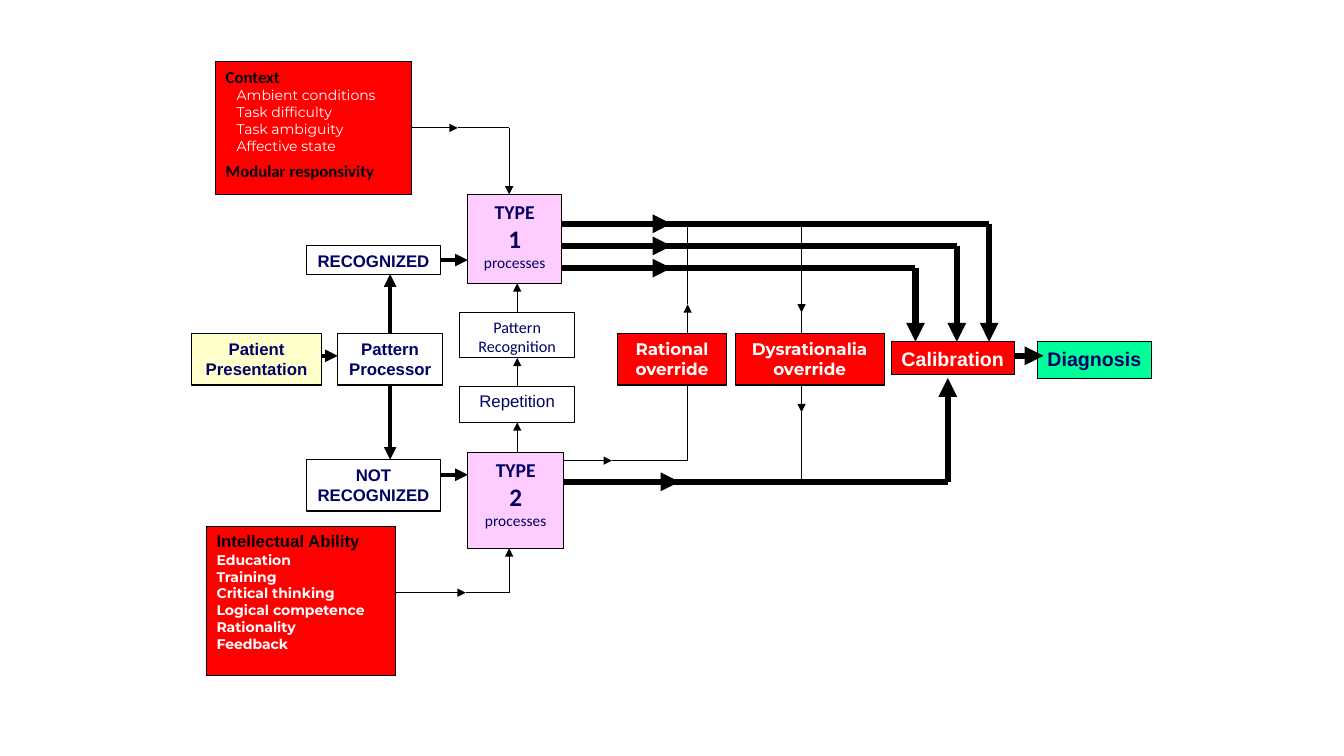
from dataclasses import dataclass
from typing import NamedTuple

from lxml.etree import SubElement
from pptx import Presentation
from pptx.dml.color import RGBColor
from pptx.enum.shapes import MSO_CONNECTOR as Connector, MSO_SHAPE as Shape
from pptx.enum.text import MSO_ANCHOR as Anchor, PP_ALIGN as Align
from pptx.oxml.ns import qn
from pptx.util import Emu, Pt

PX = 9144  # EMU per px, 100 px to the inch
BLACK = RGBColor(0x00, 0x00, 0x00)
WHITE = RGBColor(0xFF, 0xFF, 0xFF)
RED = RGBColor(0xFF, 0x00, 0x00)
NAVY = RGBColor(0x00, 0x00, 0x66)
PINK = RGBColor(0xFF, 0xCC, 0xFF)
CREAM = RGBColor(0xFF, 0xFF, 0xCC)
MINT = RGBColor(0x00, 0xFF, 0x99)
THIN, MEDIUM, THICK = 0.75, 3, 4.5


class Style(NamedTuple):
    font: str
    size: float
    color: RGBColor
    bold: bool = True
    indent: int = 0
    space_before: float = 0


class Label(NamedTuple):
    text: str
    style: Style


@dataclass
class Box:
    left: int
    top: int
    width: int
    height: int
    fill: RGBColor
    labels: list[Label]
    centred: bool = True

    def sites(self) -> list[tuple[float, float]]:
        """Side midpoints in connection order: top, left, bottom, right."""
        middle_x, middle_y = self.left + self.width / 2, self.top + self.height / 2
        return [(middle_x, self.top), (self.left, middle_y),
                (middle_x, self.top + self.height), (self.left + self.width, middle_y)]


class Line(NamedTuple):
    start: tuple[int, int]
    end: tuple[int, int]
    weight: float = THIN
    arrow: bool = True


STEP = Style("Arial", 12, NAVY)
OUTCOME = Style("Arial", 14, NAVY)
OVERRIDE = Style("Montserrat", 12, WHITE)
HEADING = Style("Calibri", 12, BLACK)
ABILITY = Style("Montserrat", 10, WHITE)
FACTOR = ABILITY._replace(bold=False, indent=11)


def label_all(style: Style, *texts: str) -> list[Label]:
    return [Label(text, style) for text in texts]


def type_labels(number: str) -> list[Label]:
    return [Label("TYPE", Style("Calibri", 14, NAVY)),
            Label(number, Style("Calibri", 18, NAVY)),
            Label("processes", Style("Calibri", 11, NAVY, False))]


BOXES = [
    Box(214, 61, 194, 132, RED,
        label_all(HEADING, "Context")
        + label_all(FACTOR, "Ambient conditions", "Task difficulty",
                    "Task ambiguity", "Affective state")
        + label_all(HEADING._replace(space_before=5), "Modular responsivity"), False),
    Box(205, 522, 187, 148, RED,
        label_all(Style("Arial", 12, BLACK), "Intellectual Ability")
        + label_all(ABILITY, "Education", "Training", "Critical thinking",
                    "Logical competence", "Rationality", "Feedback"), False),
    Box(456, 310, 114, 45, WHITE,
        label_all(Style("Calibri", 11.5, NAVY, False), "Pattern Recognition")),
    Box(456, 383, 114, 36, WHITE, label_all(STEP._replace(bold=False), "Repetition")),
    Box(612, 331, 109, 51, RED, label_all(OVERRIDE, "Rational", "override")),
    Box(729, 331, 148, 51, RED, label_all(OVERRIDE, "Dysrationalia", "override")),
    Box(884, 339, 122, 33, RED, label_all(OUTCOME._replace(color=WHITE), "Calibration")),
    Box(1029, 339, 113, 37, MINT, label_all(OUTCOME, "Diagnosis")),
    Box(190, 331, 129, 51, CREAM, label_all(STEP, "Patient", "Presentation")),
    Box(335, 331, 104, 51, WHITE, label_all(STEP, "Pattern", "Processor")),
    Box(304, 244, 133, 28, WHITE, label_all(STEP, "RECOGNIZED")),
    Box(304, 456, 133, 51, WHITE, label_all(STEP, "NOT", "RECOGNIZED")),
    Box(464, 193, 93, 88, PINK, type_labels("1")),
    Box(464, 449, 95, 95, PINK, type_labels("2")),
]

LINES = [
    # Processor to the two branches
    Line((319, 353), (335, 353), MEDIUM),
    Line((387, 331), (387, 272), MEDIUM),
    Line((387, 382), (387, 456), MEDIUM),
    Line((437, 258), (464, 258), MEDIUM),
    Line((437, 471), (464, 471), MEDIUM),
    # Type 2 back to Type 1 through repetition
    Line((513, 449), (513, 419)),
    Line((513, 383), (513, 355)),
    Line((513, 310), (513, 281)),
    # Context into Type 1, ability into Type 2
    Line((408, 127), (454, 127)),
    Line((454, 127), (505, 127), arrow=False),
    Line((505, 127), (505, 193)),
    Line((392, 588), (462, 588)),
    Line((462, 588), (505, 588), arrow=False),
    Line((505, 588), (505, 544)),
    # Rational override
    Line((559, 457), (607, 457)),
    Line((607, 457), (682, 457), arrow=False),
    Line((682, 457), (682, 382), arrow=False),
    Line((682, 331), (682, 302)),
    Line((682, 302), (682, 222), arrow=False),
    # Dysrationalia override
    Line((795, 222), (795, 310)),
    Line((795, 310), (795, 331), arrow=False),
    Line((795, 382), (795, 409)),
    Line((795, 409), (795, 478), arrow=False),
    # Type 2 to calibration, calibration to diagnosis
    Line((559, 478), (674, 478), THICK),
    Line((650, 478), (940, 478), THICK, False),
    Line((940, 478), (940, 375), THICK),
    Line((1006, 353), (1035, 353), THICK),
]
# Type 1 to calibration in three lanes
for lane_y, turn_x in ((222, 981), (244, 949), (266, 908)):
    LINES += [Line((557, lane_y), (666, lane_y), THICK),
              Line((650, lane_y), (turn_x, lane_y), THICK, False),
              Line((turn_x, lane_y), (turn_x, 339), THICK)]


def px(*lengths: float) -> list[Emu]:
    return [Emu(round(length * PX)) for length in lengths]


def draw_box(page, box: Box):
    shape = page.shapes.add_shape(
        Shape.RECTANGLE, *px(box.left, box.top, box.width, box.height))
    shape.shadow.inherit = False
    shape.fill.solid()
    shape.fill.fore_color.rgb = box.fill
    shape.line.color.rgb = BLACK
    shape.line.width = Pt(THIN)
    frame = shape.text_frame
    frame.word_wrap = True
    frame.vertical_anchor = Anchor.TOP
    frame.margin_left = frame.margin_right = px(5 if box.centred else 10)[0]
    frame.margin_top = frame.margin_bottom = px(5)[0]
    frame.text = "\n".join(label.text for label in box.labels)
    for para, label in zip(frame.paragraphs, box.labels):
        style = label.style
        para.alignment = Align.CENTER if box.centred else Align.LEFT
        if style.space_before:
            para.space_before = Pt(style.space_before)
        if style.indent:
            para._p.get_or_add_pPr().set("marL", str(style.indent * PX))
        font = para.runs[0].font
        font.name, font.size, font.bold = style.font, Pt(style.size), style.bold
        font.color.rgb = style.color
    return shape


def draw_line(page, line: Line, shapes: list) -> None:
    """Draw a line, joined to any box whose side midpoint it touches."""
    connector = page.shapes.add_connector(
        Connector.STRAIGHT, *px(*line.start, *line.end))
    connector.line.color.rgb = BLACK
    connector.line.width = Pt(line.weight)
    if line.arrow:
        SubElement(connector.line._get_or_add_ln(), qn("a:tailEnd"), type="triangle")
    SubElement(connector._element.spPr, qn("a:effectLst"))
    for box, shape in zip(BOXES, shapes):
        for site, point in enumerate(box.sites()):
            if point == line.start:
                connector.begin_connect(shape, site)
            if point == line.end:
                connector.end_connect(shape, site)


def main() -> None:
    deck = Presentation()
    deck.slide_width, deck.slide_height = px(1333, 750)
    page = deck.slides.add_slide(deck.slide_layouts[6])
    shapes = [draw_box(page, box) for box in BOXES]
    for line in LINES:
        draw_line(page, line, shapes)
    deck.save("out.pptx")


if __name__ == "__main__":
    main()
